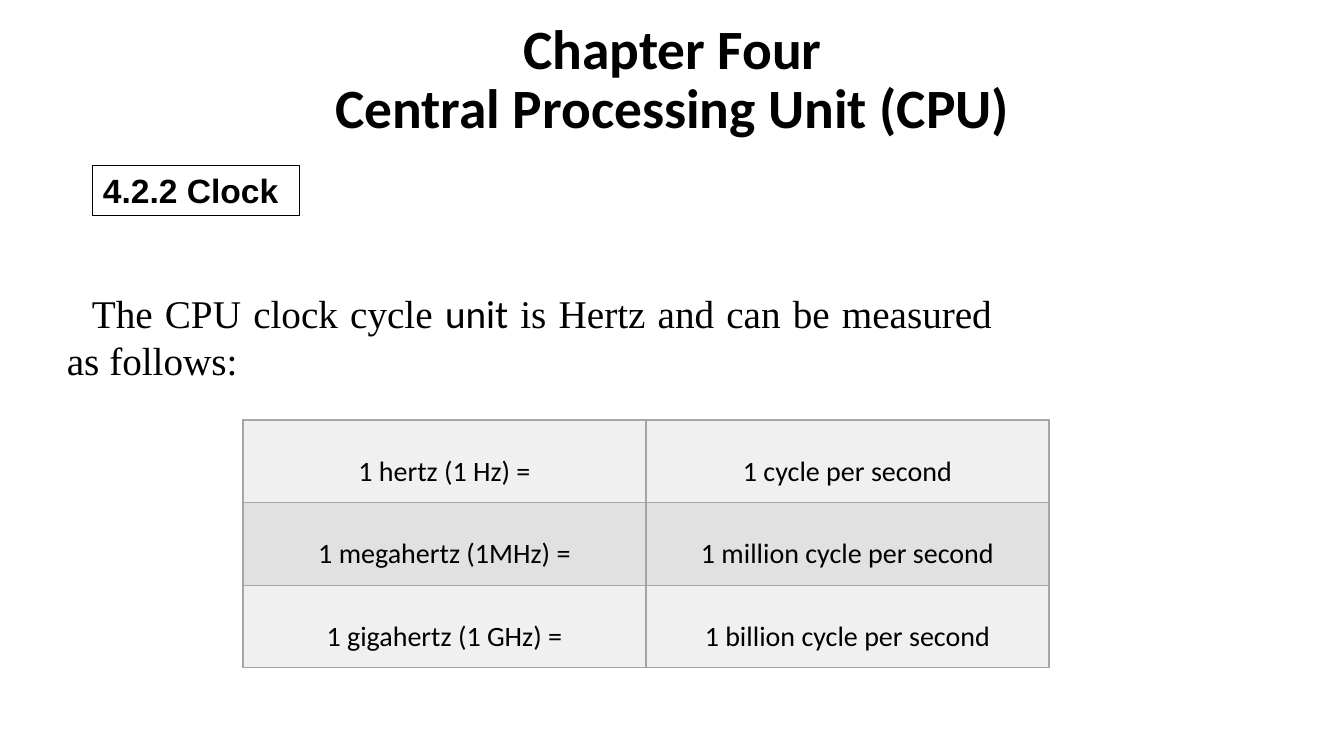
"""Build the CPU clock slide with its table of frequency units."""
from lxml.etree import SubElement
from pptx import Presentation
from pptx.dml.color import RGBColor as Rgb
from pptx.enum.shapes import MSO_SHAPE as Shape
from pptx.enum.text import MSO_ANCHOR as Anchor, PP_ALIGN as Align
from pptx.oxml.ns import qn
from pptx.util import Pt

PX = 9071
COLORS = {"ink": "000000", "edge": "A5A5A5", "light": "F0F0F0", "dark": "E1E1E1"}
TITLE = ["Chapter Four", "Central Processing Unit (CPU)"]
HEAD = "4.2.2 Clock"
BODY = [
    ("The CPU clock cycle ", "Times New Roman"),
    ("unit", "Calibri"),
    (" is Hertz and can be measured as follows:", "Times New Roman"),
]
UNITS = [
    ("1 hertz (1 Hz) =", "1 cycle per second"),
    ("1 megahertz (1MHz) =", "1 million cycle per second"),
    ("1 gigahertz (1 GHz) =", "1 billion cycle per second"),
]
BOXES = {
    "title": (93, 20, 1159, 122),
    "head": (93, 165, 207, 51),
    "body": (57, 284, 945, 105),
    "units": (243, 420, 806, 248),
}


def place(name):
    return [n * PX for n in BOXES[name]]


def color(name):
    return Rgb.from_string(COLORS[name])


def style(run, face, size, bold=False):
    font = run.font
    font.name, font.size, font.bold = face, Pt(size), bold
    font.color.rgb = color("ink")


def inset(item, side, top):
    item.margin_left = item.margin_right = side * PX
    item.margin_top = item.margin_bottom = top * PX


def border(cell):
    props = cell._tc.get_or_add_tcPr()
    for i, side in enumerate("LRTB"):
        line = props.makeelement(qn("a:ln" + side), {"w": str(Pt(1))})
        fill = SubElement(line, qn("a:solidFill"))
        SubElement(fill, qn("a:srgbClr"), val=COLORS["edge"])
        props.insert(i, line)


def add_title(slide):
    frame = slide.shapes.add_textbox(*place("title")).text_frame
    frame.word_wrap = True
    frame.vertical_anchor = Anchor.MIDDLE
    inset(frame, 10, 0)
    frame.text = "\n".join(TITLE)
    for par in frame.paragraphs:
        par.alignment, par.line_spacing = Align.CENTER, 0.9
        style(par.runs[0], "Calibri", 39.6, True)


def add_head(slide):
    box = slide.shapes.add_shape(Shape.RECTANGLE, *place("head"))
    box.shadow.inherit = False
    box.fill.background()
    box.line.color.rgb = color("ink")
    box.line.width = Pt(0.75)
    frame = box.text_frame
    frame.text = HEAD
    par = frame.paragraphs[0]
    par.alignment = Align.LEFT
    style(par.runs[0], "Arial", 24, True)


def add_body(slide):
    frame = slide.shapes.add_textbox(*place("body")).text_frame
    frame.word_wrap = True
    frame.vertical_anchor = Anchor.MIDDLE
    par = frame.paragraphs[0]
    par.alignment = Align.JUSTIFY
    par._p.get_or_add_pPr().set("indent", str(25 * PX))
    for text, face in BODY:
        run = par.add_run()
        run.text = text
        style(run, face, 28)


def add_units(slide):
    rows, cols = len(UNITS), len(UNITS[0])
    table = slide.shapes.add_table(rows, cols, *place("units")).table
    for r, row in enumerate(UNITS):
        for c, text in enumerate(row):
            cell = table.cell(r, c)
            inset(cell, 7, 0)
            cell.fill.solid()
            cell.fill.fore_color.rgb = color("dark" if r % 2 else "light")
            border(cell)
            cell.text_frame.text = text
            par = cell.text_frame.paragraphs[0]
            par.alignment, par.line_spacing = Align.CENTER, 2.0
            style(par.runs[0], "Calibri", 20)


def main():
    deck = Presentation()
    deck.slide_width, deck.slide_height = 1344 * PX, 756 * PX
    slide = deck.slides.add_slide(deck.slide_layouts[6])
    for add in (add_title, add_units, add_head, add_body):
        add(slide)
    deck.save("out.pptx")


if __name__ == "__main__":
    main()
